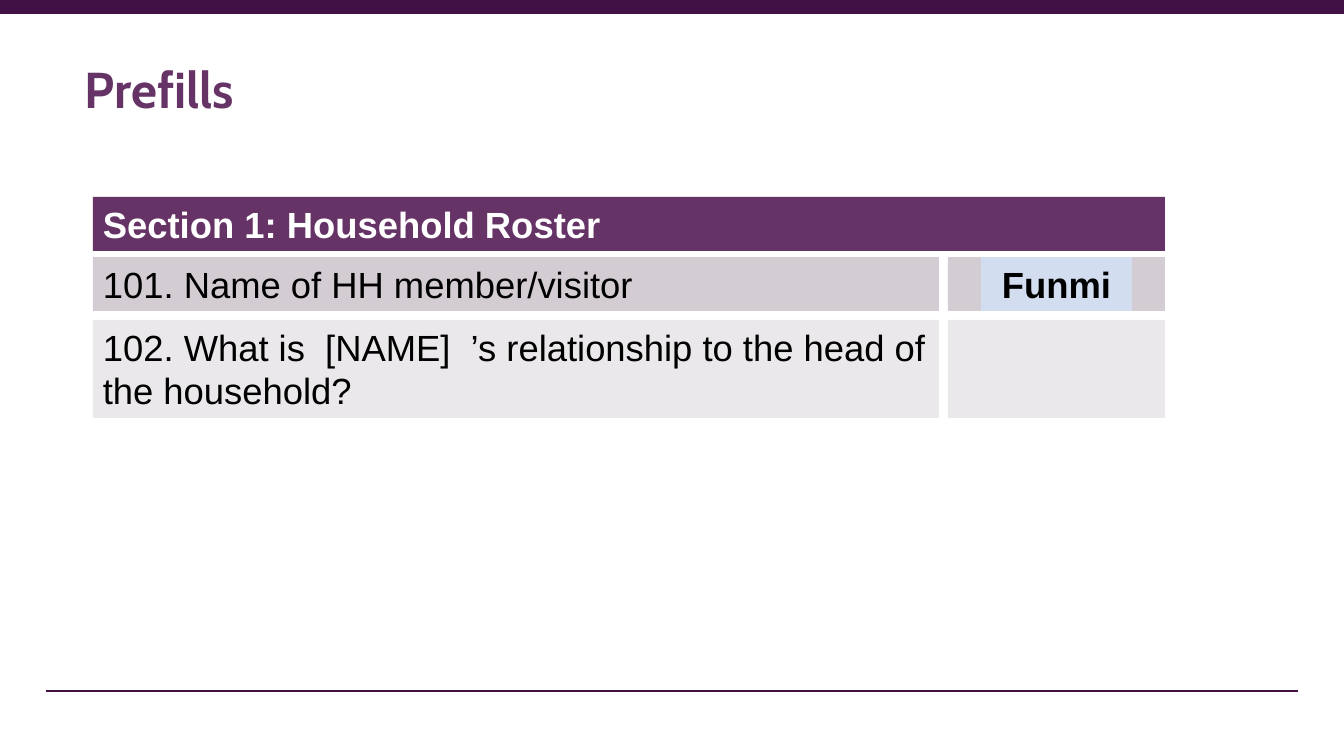
"""Builds the Prefills slide with its household roster grid."""
from lxml.etree import SubElement
from pptx import Presentation
from pptx.dml.color import RGBColor
from pptx.enum.shapes import MSO_CONNECTOR as Connector, MSO_SHAPE as Shape
from pptx.enum.text import MSO_ANCHOR as Anchor, PP_ALIGN as Align
from pptx.oxml.ns import qn
from pptx.util import Emu, Pt

EMU_PER_PX = 914400 / 100.8
DARK, PURPLE, WHITE, BLACK = "411044", "663366", "FFFFFF", "000000"
ROW_SHADE, ROW_LIGHT, PREFILL_BLUE = "D3CDD3", "EAE8EA", "D2DEEF"
LEFT, RIGHT, QUESTION_WIDTH, ANSWER_LEFT = 93, 1165, 846, 948
ROWS = [
    (257, 54, ROW_SHADE, "101. Name of HH member/visitor"),
    (320, 98, ROW_LIGHT,
     "102. What is  [NAME]  ’s relationship to the head of the household?"),
]


def px(*lengths):
    """Turn pixel lengths into EMU."""
    return [Emu(round(length * EMU_PER_PX)) for length in lengths]


def color(value):
    """Turn a hex string into a colour."""
    return RGBColor.from_string(value)


def add_rule(page, left, right, y, weight):
    """Draw a horizontal dark line."""
    rule = page.shapes.add_connector(Connector.STRAIGHT, *px(left, y, right, y))
    rule.line.color.rgb = color(DARK)
    rule.line.width = Pt(weight)
    SubElement(rule._element.spPr, qn("a:effectLst"))


def write(box, text, size, ink, font="Arial", bold=False, align=Align.LEFT,
          anchor=Anchor.TOP):
    """Put one styled run of text into a box."""
    frame = box.text_frame
    frame.word_wrap = True
    frame.vertical_anchor = anchor
    para = frame.paragraphs[0]
    para.alignment = align
    span = para.add_run()
    span.text = text
    span.font.name = font
    span.font.size = Pt(size)
    span.font.bold = bold
    span.font.color.rgb = color(ink)


def add_cell(page, left, top, width, height, fill):
    """Draw a plain filled cell and return it."""
    cell = page.shapes.add_shape(Shape.RECTANGLE, *px(left, top, width, height))
    cell.shadow.inherit = False
    cell.fill.solid()
    cell.fill.fore_color.rgb = color(fill)
    cell.line.fill.background()
    return cell


def add_title(page, text):
    """Add the slide title."""
    box = page.shapes.add_textbox(*px(75, 53, 1193, 123))
    write(box, text, 36, PURPLE, font="Cabin", bold=True)


def add_roster(page):
    """Add the section header, the question rows and the prefilled answer."""
    header = add_cell(page, LEFT, 197, RIGHT - LEFT, 54, PURPLE)
    write(header, "Section 1: Household Roster", 26, WHITE, bold=True)
    for top, height, fill, question in ROWS:
        cell = add_cell(page, LEFT, top, QUESTION_WIDTH, height, fill)
        write(cell, question, 26, BLACK)
        add_cell(page, ANSWER_LEFT, top, RIGHT - ANSWER_LEFT, height, fill)
    top, height = ROWS[0][:2]
    prefill = add_cell(page, 981, top, 151, height, PREFILL_BLUE)
    write(prefill, "Funmi", 26, BLACK, bold=True, align=Align.CENTER,
          anchor=Anchor.MIDDLE)


def main():
    """Build and save the deck."""
    deck = Presentation()
    deck.slide_width, deck.slide_height = px(1344, 756)
    page = deck.slides.add_slide(deck.slide_layouts[6])
    add_rule(page, 46, 1298, 691, 1.25)
    add_rule(page, 0, 1344, 7, 10.25)
    add_title(page, "Prefills")
    add_roster(page)
    deck.save("out.pptx")


if __name__ == "__main__":
    main()
